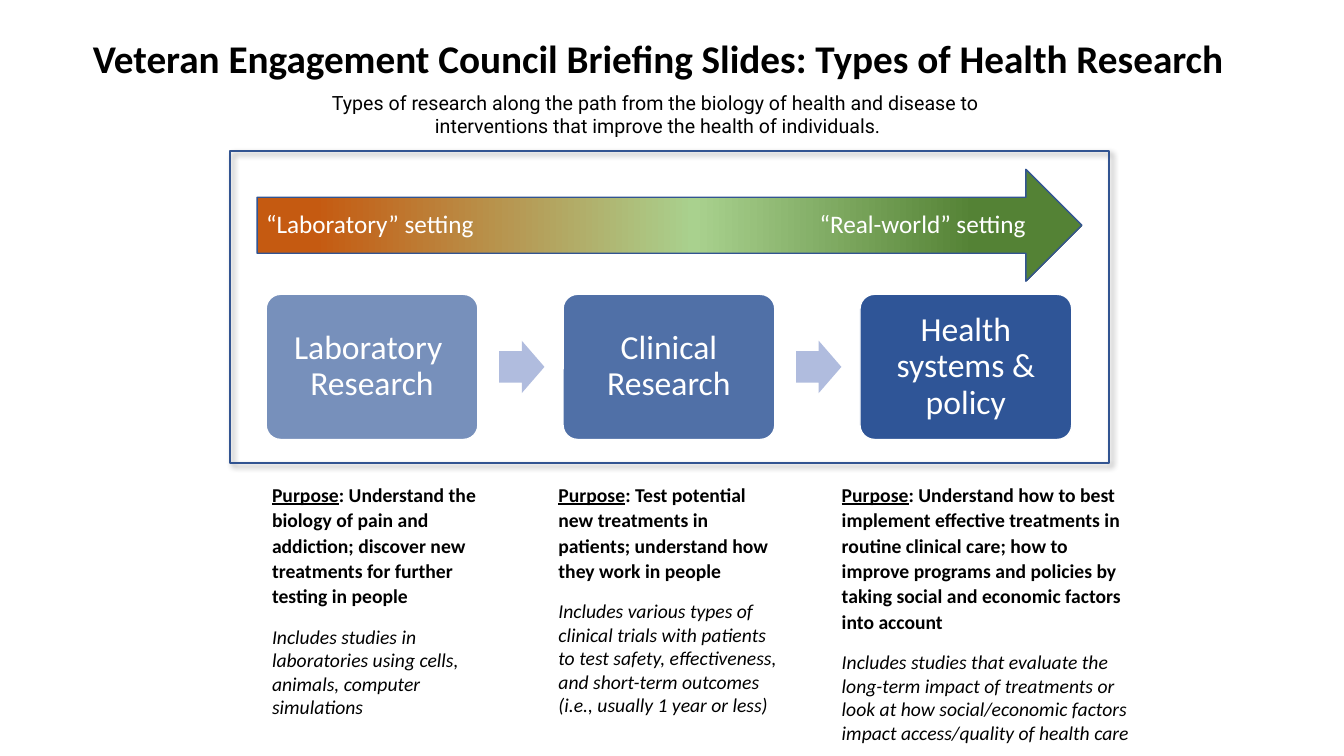
"""Build a slide on the types of health research, from laboratory to policy."""
from dataclasses import dataclass

import lxml.etree
import pptx
import pptx.dml.color
import pptx.enum.shapes
import pptx.enum.text
import pptx.oxml.ns
import pptx.util

Inches = pptx.util.Inches
Pt = pptx.util.Pt
qn = pptx.oxml.ns.qn
SHAPE = pptx.enum.shapes.MSO_SHAPE
ANCHOR = pptx.enum.text.MSO_ANCHOR
ALIGN = pptx.enum.text.PP_ALIGN
AUTO_SIZE = pptx.enum.text.MSO_AUTO_SIZE


@dataclass(frozen=True)
class Theme:
    """Colours, fonts and type sizes of the slide."""
    text: str = "000000"
    light: str = "FFFFFF"
    stage: str = "2F5597"
    step: str = "B0BCDE"
    outline: str = "325491"
    spectrum: tuple = ((7, "C55A11"), (53, "A9D18E"), (87, "548235"))
    font: str = "Calibri"
    subtitle_font: str = "Roboto"
    title_size: int = 28
    stage_size: int = 24
    setting_size: int = 18
    body_size: int = 14


THEME = Theme()

STAGES = [
    ("Laboratory \vResearch", 65, 2.6, 2.37,
     "Understand the biology of pain and addiction; discover new treatments "
     "for further testing in people",
     "Includes studies in laboratories using cells, animals, computer simulations"),
    ("Clinical Research", 84, 5.44, 2.42,
     "Test potential new treatments in patients; understand how they work in people",
     "Includes various types of clinical trials with patients to test safety, "
     "effectiveness, and short-term outcomes (i.e., usually 1 year or less)"),
    ("Health systems & policy", 100, 8.25, 3.09,
     "Understand how to best implement effective treatments in routine clinical "
     "care; how to improve programs and policies by taking social and economic "
     "factors into account",
     "Includes studies that evaluate the long-term impact of treatments or look at "
     "how social/economic factors impact access/quality of health care"),
]


def rgb(colour):
    """Turn a hex string into a colour."""
    return pptx.dml.color.RGBColor.from_string(colour)


def style(paragraph, size, colour, font=THEME.font, bold=False, italic=False):
    """Set the font of a whole paragraph."""
    paragraph.font.name = font
    paragraph.font.size = Pt(size)
    paragraph.font.bold = bold
    paragraph.font.italic = italic
    paragraph.font.color.rgb = rgb(colour)


def add_alpha(colour_element, percent):
    """Give a colour element an opacity."""
    lxml.etree.SubElement(colour_element, qn("a:alpha"), val=str(percent * 1000))


def add_box(slide, kind, left, top, width, height, fill=None, line=None, weight=1):
    """Add a preset shape without the default shadow."""
    box = slide.shapes.add_shape(
        kind, Inches(left), Inches(top), Inches(width), Inches(height))
    box.shadow.inherit = False
    if fill:
        box.fill.solid()
        box.fill.fore_color.rgb = rgb(fill)
    else:
        box.fill.background()
    if line:
        box.line.color.rgb = rgb(line)
        box.line.width = Pt(weight)
    else:
        box.line.fill.background()
    return box


def add_text_frame(slide, left, top, width, height):
    """Add a wrapping text box and return its frame."""
    frame = slide.shapes.add_textbox(
        Inches(left), Inches(top), Inches(width), Inches(height)).text_frame
    frame.word_wrap = True
    return frame


def fill_heading(placeholder, text, top, height, size, font, bold):
    """Place and format a heading placeholder."""
    placeholder.left, placeholder.top = Inches(0.43), Inches(top)
    placeholder.width, placeholder.height = Inches(12.19), Inches(height)
    frame = placeholder.text_frame
    frame.text = text
    frame.auto_size = AUTO_SIZE.NONE
    frame.vertical_anchor = ANCHOR.TOP
    heading = frame.paragraphs[0]
    heading.alignment = ALIGN.CENTER
    heading.space_before = Pt(0)
    style(heading, size, THEME.text, font, bold)


def add_spectrum(slide):
    """Add the gradient arrow from laboratory to real-world settings."""
    spectrum = add_box(slide, SHAPE.RIGHT_ARROW, 2.55, 1.68, 8.18, 1.11,
                       line=THEME.outline)
    spectrum.fill.gradient()
    spectrum.fill.gradient_angle = 0
    stops = spectrum._element.spPr.find(".//" + qn("a:gsLst"))
    stops.clear()
    for position, colour in THEME.spectrum:
        stop = lxml.etree.SubElement(stops, qn("a:gs"), pos=str(position * 1000))
        lxml.etree.SubElement(stop, qn("a:srgbClr"), val=colour)
    for left, setting in ((2.54, "“Laboratory” setting"), (8.03, "“Real-world” setting")):
        frame = add_text_frame(slide, left, 2.02, 2.38, 0.4)
        frame.text = setting
        style(frame.paragraphs[0], THEME.setting_size, THEME.light)


def add_stage(slide, left, name, opacity):
    """Add one rounded research stage."""
    stage = add_box(slide, SHAPE.ROUNDED_RECTANGLE, left, 2.92, 2.1, 1.44,
                    THEME.stage, THEME.light)
    stage.adjustments[0] = 0.1
    if opacity < 100:
        add_alpha(stage._element.spPr.find(qn("a:solidFill"))[0], opacity)
    frame = stage.text_frame
    frame.text = name
    frame.word_wrap = True
    frame.vertical_anchor = ANCHOR.MIDDLE
    frame.margin_left = frame.margin_right = Inches(0.1)
    frame.margin_top = frame.margin_bottom = Inches(0.1)
    label = frame.paragraphs[0]
    label.alignment = ALIGN.CENTER
    label.line_spacing = 0.9
    style(label, THEME.stage_size, THEME.light)


def add_step(slide, left):
    """Add the small arrow between two stages."""
    step = add_box(slide, SHAPE.RIGHT_ARROW, left, 3.38, 0.45, 0.52, THEME.step)
    step.adjustments[0] = 0.6
    step.adjustments[1] = 0.5


def add_purpose(slide, left, width, purpose, examples):
    """Add the purpose and examples below a stage."""
    frame = add_text_frame(slide, left, 4.72, width, 2.72)
    goal = frame.paragraphs[0]
    goal.line_spacing = 1.08
    style(goal, THEME.body_size, THEME.text, bold=True)
    keyword = goal.add_run()
    keyword.text = "Purpose"
    keyword.font.underline = True
    goal.add_run().text = ": " + purpose
    scope = frame.add_paragraph()
    scope.text = examples
    scope.space_before = Pt(12)
    style(scope, THEME.body_size, THEME.text, italic=True)


def add_frame(slide):
    """Add the outlined frame with its soft shadow."""
    frame = add_box(slide, SHAPE.RECTANGLE, 2.28, 1.5, 8.72, 3.09,
                    line=THEME.outline, weight=1.5)
    effects = frame._element.spPr.find(qn("a:effectLst"))
    shadow = lxml.etree.SubElement(
        effects, qn("a:outerShdw"), blurRad=str(Pt(4)), dist=str(Pt(3)),
        dir="2700000", algn="tl", rotWithShape="0")
    add_alpha(lxml.etree.SubElement(shadow, qn("a:srgbClr"), val=THEME.text), 40)


def main():
    """Build and save the slide."""
    deck = pptx.Presentation()
    deck.slide_width, deck.slide_height = Inches(13.33), Inches(7.5)
    slide = deck.slides.add_slide(deck.slide_layouts[0])
    title, subtitle = slide.placeholders
    fill_heading(title, "Veteran Engagement Council Briefing Slides: Types of Health Research",
                 0.29, 0.56, THEME.title_size, THEME.font, True)
    fill_heading(subtitle, "Types of research along the path from the biology of health and "
                 "disease to \vinterventions that improve the health of individuals.",
                 0.85, 0.57, THEME.body_size, THEME.subtitle_font, False)
    add_frame(slide)
    add_spectrum(slide)
    for index, (name, opacity, left, width, purpose, examples) in enumerate(STAGES):
        stage_left = 2.64 + 2.945 * index
        add_stage(slide, stage_left, name, opacity)
        if index < len(STAGES) - 1:
            add_step(slide, stage_left + 2.31)
        add_purpose(slide, left, width, purpose, examples)
    deck.save("out.pptx")


if __name__ == "__main__":
    main()
